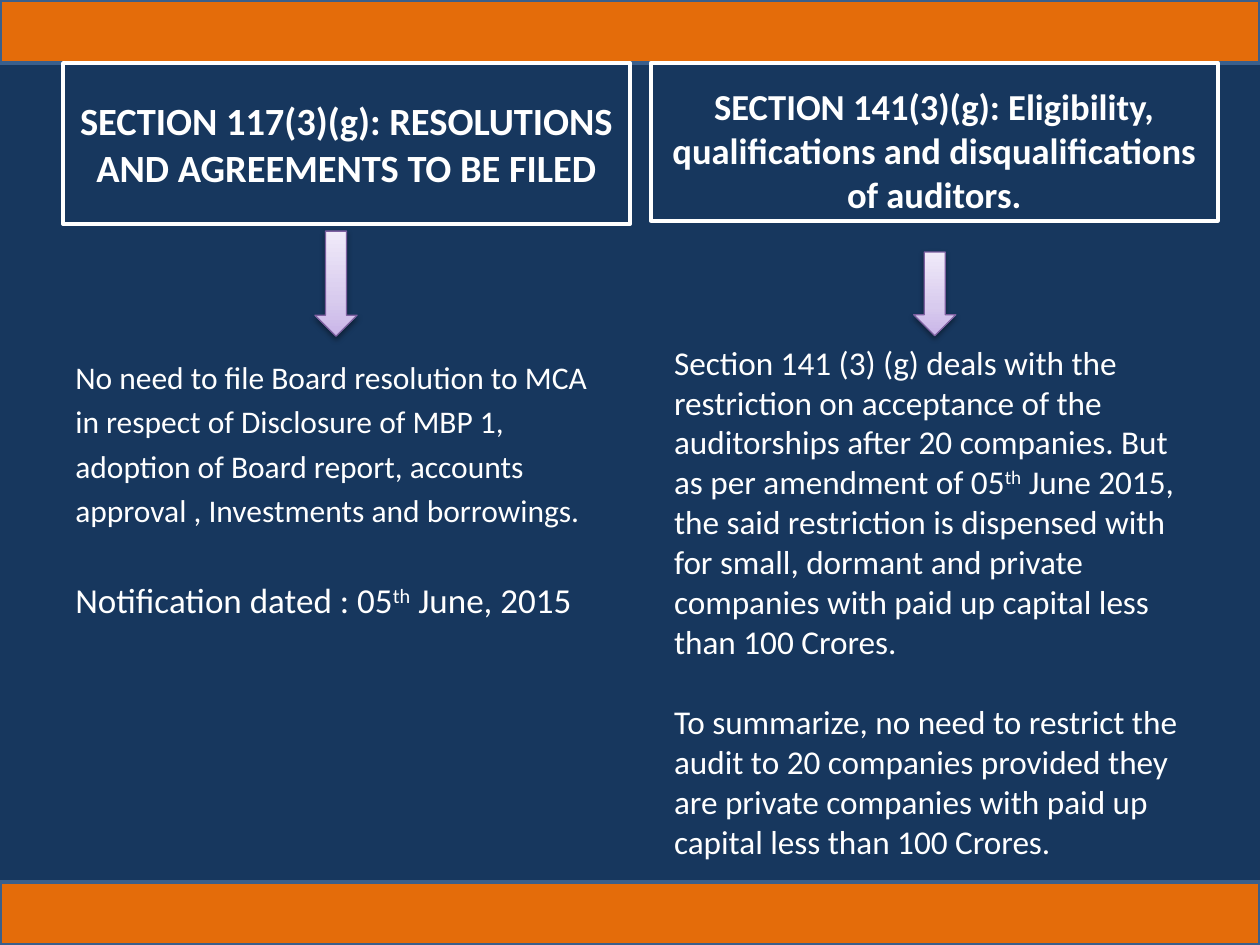
from lxml import etree
from pptx import Presentation
from pptx.dml.color import RGBColor
from pptx.enum import shapes, text
from pptx.oxml import ns
from pptx.util import Cm, Pt

NAVY = RGBColor(0x17, 0x37, 0x5E)
ORANGE = RGBColor(0xE4, 0x6C, 0x0A)
BAR_EDGE = RGBColor(0x3A, 0x5F, 0x8C)
WHITE = RGBColor(0xFF, 0xFF, 0xFF)
ARROW_EDGE = RGBColor(0x7D, 0x60, 0xA0)
ARROW_STOPS = (
    (0, RGBColor(0xC9, 0xB5, 0xE8)),
    (35, RGBColor(0xD8, 0xCB, 0xEE)),
    (100, RGBColor(0xF0, 0xEA, 0xF9)),
)
BLACK = RGBColor(0, 0, 0)

SLIDE_WIDTH, SLIDE_HEIGHT = Cm(25.4), Cm(19.05)
BAR_HEIGHT = Cm(1.27)
FONT = "Calibri"


def add_outlined(slide, kind, box, edge, weight):
    shape = slide.shapes.add_shape(kind, *box)
    shape.shadow.inherit = False
    shape.line.color.rgb = edge
    shape.line.width = Pt(weight)
    return shape


def add_bar(slide, top):
    bar = add_outlined(slide, shapes.MSO_SHAPE.RECTANGLE,
                       (0, top, SLIDE_WIDTH, BAR_HEIGHT), BAR_EDGE, 2)
    bar.fill.solid()
    bar.fill.fore_color.rgb = ORANGE


def add_run(paragraph, words, size, bold=False, raised=False):
    run = paragraph.add_run()
    run.text = words
    run.font.name = FONT
    run.font.size = Pt(size)
    run.font.bold = bold
    run.font.color.rgb = WHITE
    if raised:
        run.font._element.set("baseline", "30000")


def add_heading(slide, box, words, size, weight, top_inset=None):
    """Add a white frame; its text is centred unless a top inset is given."""
    heading = add_outlined(slide, shapes.MSO_SHAPE.RECTANGLE, box, WHITE, weight)
    heading.fill.background()
    frame = heading.text_frame
    frame.word_wrap = True
    frame.vertical_anchor = text.MSO_ANCHOR.MIDDLE
    if top_inset is not None:
        frame.vertical_anchor = text.MSO_ANCHOR.TOP
        frame.margin_top = top_inset
    paragraph = frame.paragraphs[0]
    paragraph.alignment = text.PP_ALIGN.CENTER
    add_run(paragraph, words, size, bold=True)


def add_body(slide, box, paragraphs):
    """Add paragraphs given as (size, space before, runs); odd runs are raised."""
    frame = slide.shapes.add_textbox(*box).text_frame
    frame.word_wrap = True
    for index, (size, space, runs) in enumerate(paragraphs):
        paragraph = frame.add_paragraph() if index else frame.paragraphs[0]
        paragraph.space_before = Pt(space)
        for position, words in enumerate(runs):
            add_run(paragraph, words, size, raised=position % 2 == 1)


def add_color(parent, color):
    return etree.SubElement(parent, ns.qn("a:srgbClr"), val=str(color))


def add_arrow(slide, box):
    """Add a down arrow with a vertical gradient and a soft shadow."""
    arrow = add_outlined(slide, shapes.MSO_SHAPE.DOWN_ARROW, box, ARROW_EDGE, 0.75)
    properties = arrow._element.spPr

    gradient = etree.Element(ns.qn("a:gradFill"), rotWithShape="1")
    stops = etree.SubElement(gradient, ns.qn("a:gsLst"))
    for percent, color in ARROW_STOPS:
        stop = etree.SubElement(stops, ns.qn("a:gs"), pos=str(percent * 1000))
        add_color(stop, color)
    etree.SubElement(gradient, ns.qn("a:lin"), ang=str(270 * 60000), scaled="0")
    properties.find(ns.qn("a:prstGeom")).addnext(gradient)

    shadow = etree.SubElement(
        properties.find(ns.qn("a:effectLst")), ns.qn("a:outerShdw"),
        blurRad=str(Pt(3.1)), dist=str(Pt(1.6)), dir=str(90 * 60000),
        rotWithShape="0")
    etree.SubElement(add_color(shadow, BLACK), ns.qn("a:alpha"), val="38000")


def main():
    deck = Presentation()
    deck.slide_width, deck.slide_height = SLIDE_WIDTH, SLIDE_HEIGHT
    slide = deck.slides.add_slide(deck.slide_layouts[6])
    slide.background.fill.solid()
    slide.background.fill.fore_color.rgb = NAVY

    add_bar(slide, 0)

    add_heading(slide, (Cm(1.27), BAR_HEIGHT, Cm(11.43), Cm(3.25)),
                "SECTION 117(3)(g): RESOLUTIONS AND AGREEMENTS TO BE FILED", 22, 2)
    add_body(slide, (Cm(1.27), Cm(7.1), Cm(11), Cm(10.5)), [
        (18, 0, ["No need to file Board resolution to MCA"]),
        (18, 3.6, ["in respect of Disclosure of MBP 1,"]),
        (18, 3.6, ["adoption of Board report, accounts"]),
        (18, 3.6, ["approval , Investments and borrowings."]),
        (20, 28.8, ["Notification dated : 05", "th", " June, 2015"]),
    ])

    add_heading(slide, (Cm(13.12), BAR_HEIGHT, Cm(11.43), Cm(3.18)),
                "SECTION 141(3)(g): Eligibility, qualifications and "
                "disqualifications of auditors.", 20.9, 2.25, top_inset=Cm(0.42))
    add_body(slide, (Cm(13.34), Cm(6.77), Cm(11), Cm(11.43)), [
        (19, 0, ["Section 141 (3) (g) deals with the restriction on acceptance "
                 "of the auditorships after 20 companies. But as per amendment "
                 "of 05", "th",
                 " June 2015, the said restriction is dispensed with for small, "
                 "dormant and private companies with paid up capital less than "
                 "100 Crores."]),
        (19, 23, ["To summarize, no need to restrict the audit to 20 companies "
                  "provided they are private companies with paid up capital "
                  "less than 100 Crores."]),
    ])

    add_arrow(slide, (Cm(6.35), Cm(4.66), Cm(0.85), Cm(2.12)))
    add_arrow(slide, (Cm(18.42), Cm(5.08), Cm(0.85), Cm(1.69)))
    add_bar(slide, SLIDE_HEIGHT - BAR_HEIGHT)

    deck.save("out.pptx")


if __name__ == "__main__":
    main()
